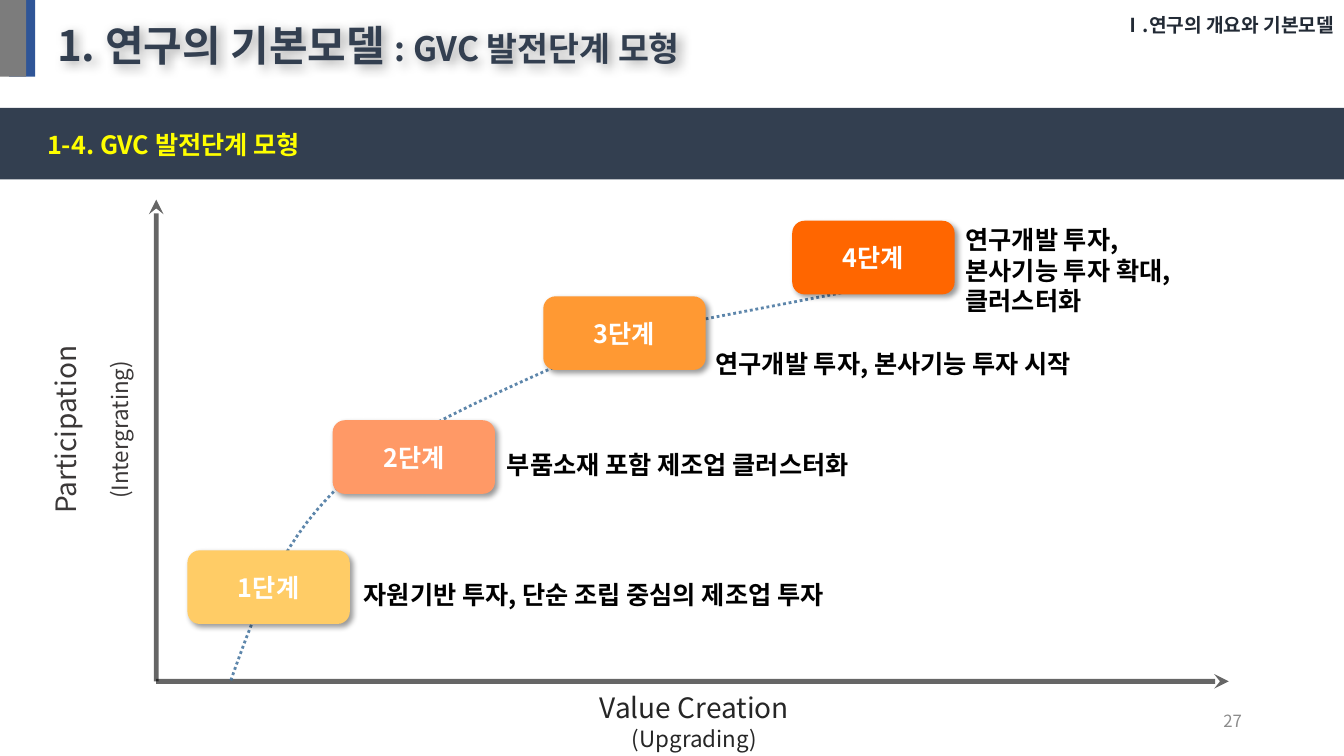
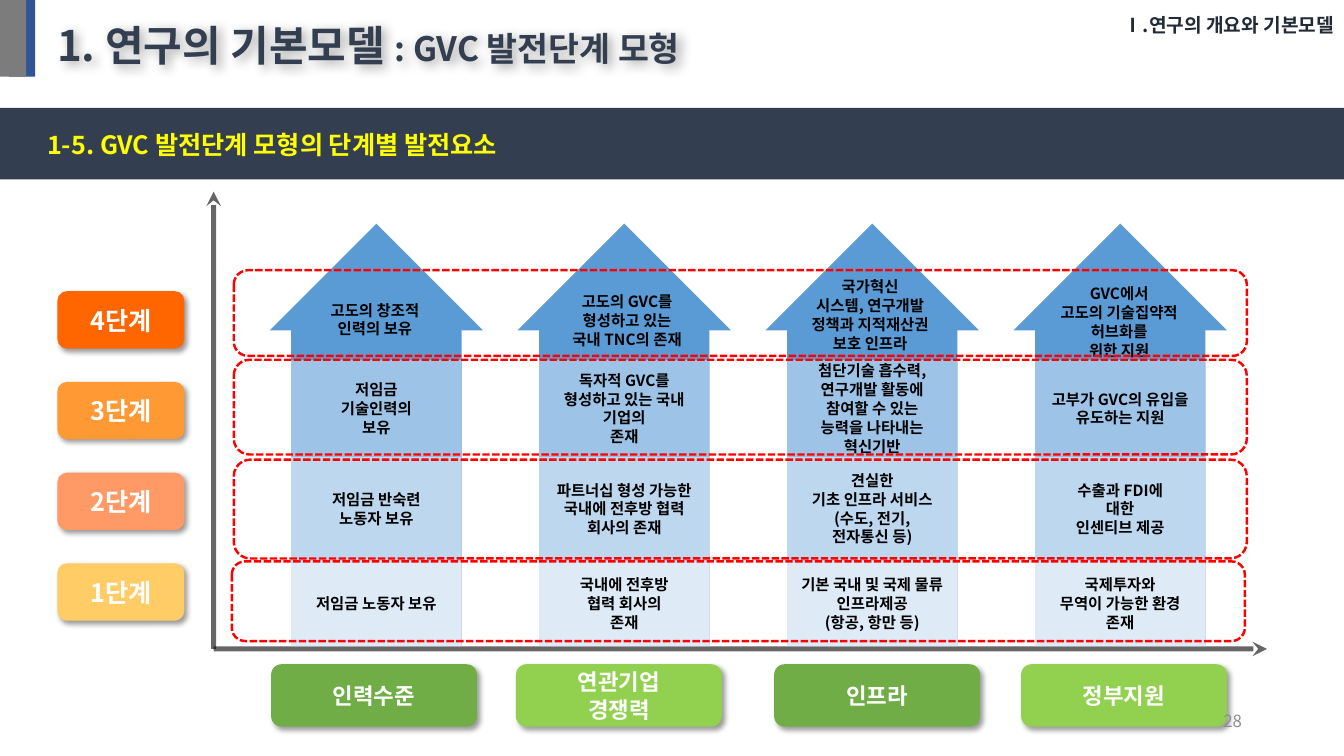
from lxml.etree import SubElement as Sub
from pptx import Presentation
from pptx.dml.color import RGBColor as RGB
from pptx.enum.dml import MSO_LINE as Dash
from pptx.enum.shapes import MSO_CONNECTOR as Conn, MSO_SHAPE as Geo
from pptx.enum.text import MSO_ANCHOR as Anc, PP_ALIGN as Al
from pptx.oxml.ns import qn
from pptx.util import Pt

FONT = "Noto Sans CJK KR"
LEAD = 1.22
WIDE, HIGH = 960, 540
HEX = {
    "white": "FFFFFF", "black": "000000", "navy": "333F50", "ink": "222A35",
    "yellow": "FFFF00", "gray": "7C7C7C", "blue": "2F5597", "page": "8C8C8C",
    "side": "3B3838", "foot": "262626", "curve": "43739E", "red": "FF0000",
    "arrow": "5B9BD5", "high": "9DC3E6", "mid": "BDD7EE", "low": "DEEBF7",
    "green": "70AD47", "lime": "92D050",
    "step1": "FFCC66", "step2": "FF9966", "step3": "FF9933", "step4": "FF6600",
}
STEPS = ["1단계", "2단계", "3단계", "4단계"]

# Each column: label, label left, label colour, top text's y and shift, texts of stages 4 to 1
COLS = [
    ("인력수준", 193.7, "green", 211, -1,
     ["고도의 창조적\n인력의 보유", "저임금\n기술인력의\n보유",
      "저임금 반숙련\n노동자 보유", "저임금 노동자 보유"]),
    ("연관기업\n경쟁력", 368.6, "lime", 205.2, 2,
     ["고도의 GVC를\n형성하고 있는\n국내 TNC의 존재",
      "독자적 GVC를\n형성하고 있는 국내\n기업의\n존재",
      "파트너십 형성 가능한\n국내에 전후방 협력\n회사의 존재",
      "국내에 전후방\n협력 회사의\n존재"]),
    ("인프라", 553, "green", 194.4, -1.5,
     ["국가혁신\n시스템, 연구개발\n정책과 지적재산권\n보호 인프라",
      "첨단기술 흡수력,\n연구개발 활동에\n참여할 수 있는\n능력을 나타내는\n혁신기반",
      "견실한\n기초 인프라 서비스\n(수도, 전기,\n전자통신 등)",
      "기본 국내 및 국제 물류\n인프라제공\n(항공, 항만 등)"]),
    ("정부지원", 729.4, "lime", 199.4, -0.7,
     ["GVC에서\n고도의 기술집약적\n허브화를\n위한 지원",
      "고부가 GVC의 유입을\n유도하는 지원",
      "수출과 FDI에\n대한\n인센티브 제공",
      "국제투자와\n무역이 가능한 환경\n존재"]),
]


def rgb(name):
    return RGB.from_string(HEX[name])


def fade(clr, pct):
    Sub(clr, qn("a:alpha"), val=str(pct * 1000))


def shade(shape, pct, blur, dist):
    """Give the shape an outer shadow towards the lower right."""
    fx = shape._element.spPr.find(qn("a:effectLst"))
    out = Sub(fx, qn("a:outerShdw"), blurRad=str(Pt(blur)), dist=str(Pt(dist)),
              dir="2700000", algn="tl", rotWithShape="0")
    fade(Sub(out, qn("a:srgbClr"), val=HEX["black"]), pct)


def write(shape, lines, color, align=Al.LEFT, anchor=Anc.TOP, bold=True):
    """Set the text; lines holds paragraphs, each a list of (text, size)."""
    frame = shape.text_frame
    frame.word_wrap = True
    frame.vertical_anchor = anchor
    for i, runs in enumerate(lines):
        para = frame.add_paragraph() if i else frame.paragraphs[0]
        para.alignment = align
        para.line_spacing = Pt(round(LEAD * max(size for _, size in runs), 2))
        for text, size in runs:
            run = para.add_run()
            run.text = text
            font = run.font
            font.size, font.bold, font.name = Pt(size), bold, FONT
            font.color.rgb = rgb(color)
            Sub(run._r.get_or_add_rPr(), qn("a:ea"), typeface=FONT)


def split(text, size):
    return [[(line, size)] for line in text.split("\n")]


def label(slide, box, text, size, color="black", **style):
    shape = slide.shapes.add_textbox(*map(Pt, box))
    write(shape, split(text, size), color, **style)
    return shape


def block(slide, box, fill, geo=Geo.RECTANGLE, text="", size=11, color="black"):
    shape = slide.shapes.add_shape(geo, *map(Pt, box))
    shape.shadow.inherit = False
    shape.fill.solid()
    shape.fill.fore_color.rgb = rgb(fill)
    shape.line.fill.background()
    if text:
        write(shape, split(text, size), color, Al.CENTER, Anc.MIDDLE)
    return shape


def badge(slide, box, fill, text, size):
    shape = block(slide, box, fill, Geo.ROUNDED_RECTANGLE, text, size, "white")
    shade(shape, 40, 4, 3)


def stroke(line, color, width, pct):
    line.color.rgb = rgb(color)
    line.width = Pt(width)
    ln = line._get_or_add_ln()
    fade(ln.find(".//" + qn("a:srgbClr")), pct)
    return ln


def axes(slide, x, y, top, right):
    """Draw two arrows that leave the corner (x, y)."""
    for tip in ((x, top), (right, y)):
        arm = slide.shapes.add_connector(Conn.STRAIGHT, *map(Pt, (x, y, *tip)))
        Sub(stroke(arm.line, "black", 3.5, 60), qn("a:tailEnd"), type="stealth")
        Sub(arm._element.spPr, qn("a:effectLst"))


def frame(slide, topic, page):
    """Draw the title, the band and the page number."""
    label(slide, (151.2, 0, 808.8, 35.3), "Ⅰ.연구의 개요와 기본모델", 13.7, "ink",
          align=Al.RIGHT, anchor=Anc.MIDDLE)
    block(slide, (6.5, 0, 18.7, 54.7), "blue")
    block(slide, (0, 0, 18.7, 54.7), "gray")
    block(slide, (0, 77, WIDE, 51.1), "navy")
    label(slide, (26.6, 88.6, 877, 28.8), topic, 18, "yellow")
    label(slide, (678.2, 500.4, 216, 28.8), page, 12, "page",
          align=Al.RIGHT, anchor=Anc.MIDDLE, bold=False)
    title = slide.shapes.add_textbox(*map(Pt, (33.8, 9.4, 705.6, 43.9)))
    write(title, [[("1. 연구의 기본모델 ", 30), (": GVC 발전단계 모형", 24)]],
          "navy", anchor=Anc.MIDDLE)
    title.shadow.inherit = False
    shade(title, 35, 8, 3)


def bend(a, b, c, d, steps=16):
    """Return points along a cubic curve, without its start."""
    pts = []
    for i in range(1, steps + 1):
        t = i / steps
        s = 1 - t
        pts.append(tuple(s**3 * p + 3 * s * s * t * q + 3 * s * t * t * u + t**3 * v
                         for p, q, u, v in zip(a, b, c, d)))
    return pts


def path(slide):
    """Draw the dotted growth curve behind the stages."""
    start, knee, end = (164.9, 486), (250.6, 339.8), (456.5, 236.9)
    pts = bend(start, (183.6, 433.4), (202.3, 381.6), knee)
    pts += bend(knee, (299.5, 298.8), end, end) + [(674.6, 195.1)]
    pen = slide.shapes.build_freeform(*map(Pt, start), scale=1.0)
    pen.add_line_segments([(Pt(x), Pt(y)) for x, y in pts], close=False)
    curve = pen.convert_to_shape()
    curve.shadow.inherit = False
    curve.fill.background()
    stroke(curve.line, "curve", 2, 85)
    curve.line.dash_style = Dash.ROUND_DOT


def model(slide):
    """Draw the four stages along the growth curve."""
    notes = [
        (252.7, 409.7, "자원기반 투자, 단순 조립 중심의 제조업 투자"),
        (355, 316.8, "부품소재 포함 제조업 클러스터화"),
        (504, 244.8, "연구개발 투자, 본사기능 투자 시작"),
        (682.6, 156.2, "연구개발 투자,\n본사기능 투자 확대,\n클러스터화"),
    ]
    for x, y, text in notes:
        label(slide, (x, y, WIDE - x, 28.8), text, 18)
    axes(slide, 111.6, 486.7, 142.6, 877.7)
    path(slide)
    spots = [(133.9, 393.1), (237.6, 300.2), (388.1, 211.7), (565.9, 157.7)]
    for i, (x, y) in enumerate(spots):
        badge(slide, (x, y, 116, 52.6), f"step{i + 1}", STEPS[i], 18)
    for mid, high, text, size in ((46.8, 31.7, "Participation", 20),
                                  (85, 26.6, "(Intergrating)", 16)):
        side = label(slide, (mid - 80, 306.9 - high / 2, 160, high), text, size,
                     "side", align=Al.CENTER, bold=False)
        side.rotation = 270
    for y, high, text, size in ((489.6, 31.7, "Value Creation", 20),
                                (514, 26, "(Upgrading)", 16)):
        label(slide, (217.4, y, 557.3, high), text, size, "foot",
              align=Al.CENTER, bold=False)


def column(slide, x, col):
    """Draw one tall arrow with its four texts and its label."""
    name, left, tint, top, shift, texts = col
    wide, head = 121.7, 152.6
    edge = x - (head - wide) / 2
    block(slide, (x, 224, wide, 237), "arrow")
    block(slide, (edge, 159.8, head, 76.3), "arrow", Geo.ISOSCELES_TRIANGLE)
    cells = [(257, 69.2, "high"), (326.2, 74.1, "mid"), (400.3, 61.2, "low")]
    for (y, high, fill), text in zip(cells, texts[1:]):
        block(slide, (x, y, wide, high), fill, text=text)
    badge(slide, (left, 474.5, 147, 44.5), tint, name, 16)
    label(slide, (edge + shift, top, head, 60), texts[0], 11, align=Al.CENTER)


def ring(slide, box):
    shape = block(slide, box, "white", Geo.ROUNDED_RECTANGLE)
    shape.fill.background()
    stroke(shape.line, "red", 1.75, 100)
    shape.line.dash_style = Dash.SQUARE_DOT


def matrix(slide):
    """Draw the factors by stage: four arrows crossed by four rings."""
    for i, name in enumerate(STEPS):
        badge(slide, (41, 402.4 - 64.8 * i, 90.7, 41), f"step{i + 1}", name, 18)
    axes(slide, 152.6, 463.5, 136.8, 905)
    for i, col in enumerate(COLS):
        column(slide, 208 + 177.1 * i, col)
    for x, y, high in ((167, 193, 61.2), (167, 257, 67.7),
                       (167, 328.3, 70.6), (165.6, 401, 56.9)):
        ring(slide, (x, y, 723.6, high))


def main():
    deck = Presentation()
    deck.slide_width, deck.slide_height = Pt(WIDE), Pt(HIGH)
    pages = [(model, "1-4. GVC 발전단계 모형", "27"),
             (matrix, "1-5. GVC 발전단계 모형의 단계별 발전요소", "28")]
    for draw, topic, page in pages:
        slide = deck.slides.add_slide(deck.slide_layouts[6])
        draw(slide)
        frame(slide, topic, page)
    deck.save("out.pptx")


if __name__ == "__main__":
    main()
